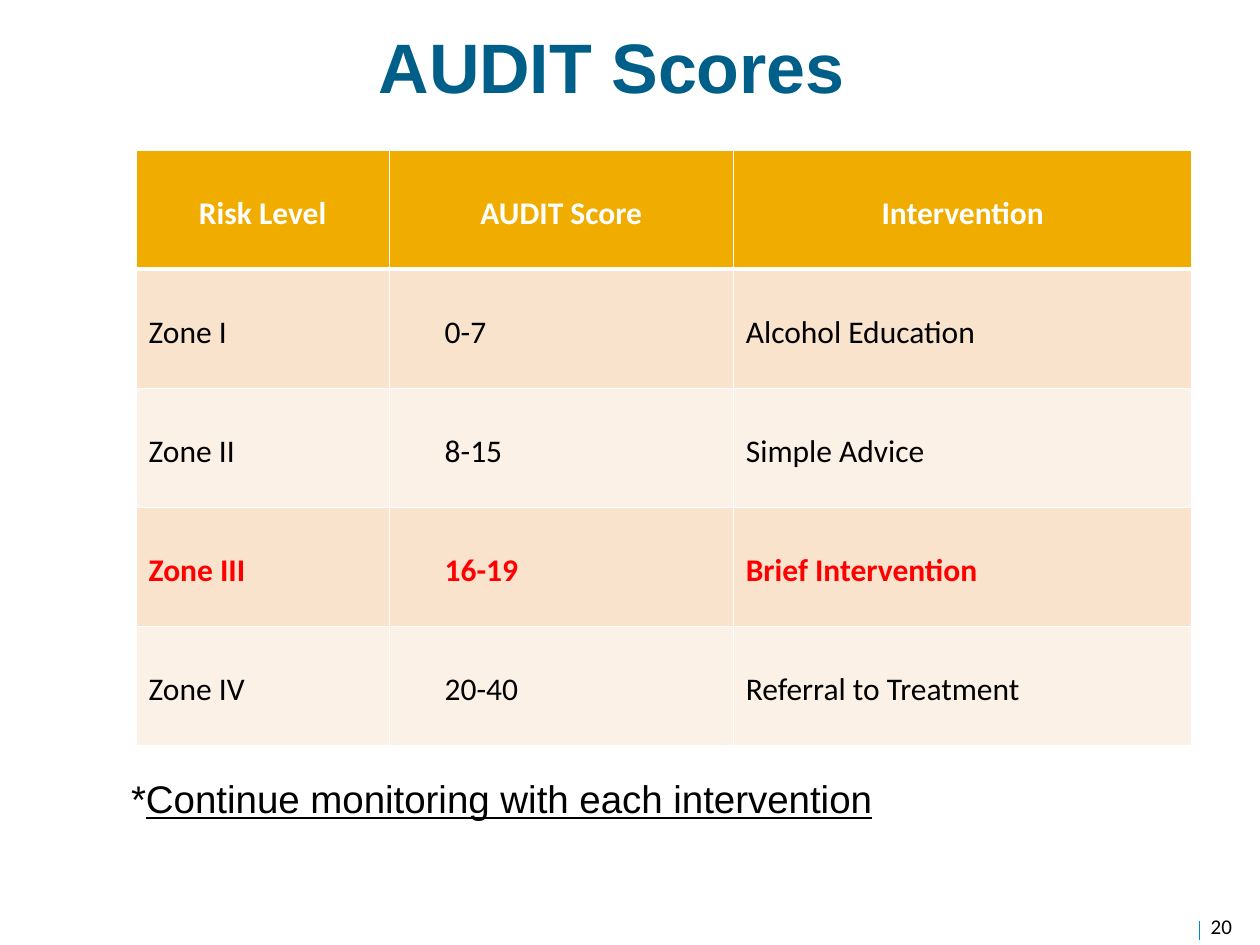
from dataclasses import dataclass

from lxml.etree import SubElement
from pptx import Presentation
from pptx.dml.color import RGBColor
from pptx.enum.shapes import MSO_CONNECTOR
from pptx.enum.text import MSO_ANCHOR, PP_ALIGN
from pptx.oxml import parse_xml
from pptx.oxml.ns import nsdecls, qn
from pptx.util import Emu, Inches, Pt

WIDTH, HEIGHT = Inches(10), Inches(7.5)
GRID_COLUMNS, GRID_ROWS = 100, 75

TEAL, BLUE, GOLD = "005F89", "0084CF", "F0AD00"
BLACK, WHITE, RED = "000000", "FFFFFF", "FF0000"
BANDS = ("F9E3CC", "FCF1E7")


@dataclass(frozen=True)
class Area:
    """A place on the slide, in grid columns and rows."""
    left: float
    top: float
    columns: float
    rows: float

    def lengths(self) -> tuple:
        return (across(self.left), down(self.top),
                across(self.columns), down(self.rows))


@dataclass(frozen=True)
class Zone:
    level: str
    score: str
    intervention: str
    stressed: bool = False


HEADINGS = ("Risk Level", "AUDIT Score", "Intervention")
ZONES = (
    Zone("Zone I", "0-7", "Alcohol Education"),
    Zone("Zone II", "8-15", "Simple Advice"),
    Zone("Zone III", "16-19", "Brief Intervention", stressed=True),
    Zone("Zone IV", "20-40", "Referral to Treatment"),
)
COLUMN_WIDTHS = (20.1, 27.3, 36.4)
CELL_INDENTS = (1, 4.4, 1)
TABLE_AREA = Area(10.8, 11.9, sum(COLUMN_WIDTHS), 47.3)


def across(columns: float) -> Emu:
    return Emu(round(WIDTH * columns / GRID_COLUMNS))


def down(rows: float) -> Emu:
    return Emu(round(HEIGHT * rows / GRID_ROWS))


def color(value: str) -> RGBColor:
    return RGBColor.from_string(value)


def write(para, text, *, size, font="Arial", fill=BLACK, bold=False,
          underline=False, align=None):
    span = para.add_run()
    span.text = text
    span.font.size, span.font.name = Pt(size), font
    span.font.bold, span.font.underline = bold, underline
    span.font.color.rgb = color(fill)
    if align is not None:
        para.alignment = align


def place(box, area: Area, anchor, inset: float = 0):
    """Move a text shape and set up its frame; return the first paragraph."""
    box.left, box.top, box.width, box.height = area.lengths()
    frame = box.text_frame
    frame.word_wrap = True
    frame.vertical_anchor = anchor
    frame.margin_left = frame.margin_right = across(inset)
    frame.margin_top = frame.margin_bottom = down(inset / 2)
    return frame.paragraphs[0]


def set_borders(cell, **widths: float):
    """Draw white cell borders; the sides come in schema order L, R, T, B."""
    properties = cell._tc.get_or_add_tcPr()
    for index, (side, width) in enumerate(widths.items()):
        properties.insert(index, parse_xml(
            f'<a:ln{side} {nsdecls("a")} w="{Pt(width)}"><a:solidFill>'
            f'<a:srgbClr val="{WHITE}"/></a:solidFill></a:ln{side}>'))


def fill_cell(cell, text: str, row: int, indent: float, stressed: bool):
    header = row == 0
    cell.fill.solid()
    cell.fill.fore_color.rgb = color(GOLD if header else BANDS[(row - 1) % 2])
    cell.vertical_anchor = MSO_ANCHOR.TOP
    cell.margin_top = down(3.5)
    cell.margin_left = across(1 if header else indent)
    write(cell.text_frame.paragraphs[0], text, size=18, font="Calibri",
          fill=WHITE if header else RED if stressed else BLACK,
          bold=header or stressed,
          align=PP_ALIGN.CENTER if header else PP_ALIGN.LEFT)
    set_borders(cell, L=1, R=1, T=3 if row == 1 else 1, B=3 if header else 1)


def add_score_table(slide):
    rows = [(HEADINGS, False)] + [
        ((zone.level, zone.score, zone.intervention), zone.stressed)
        for zone in ZONES]
    table = slide.shapes.add_table(
        len(rows), len(HEADINGS), *TABLE_AREA.lengths()).table
    for column, width in zip(table.columns, COLUMN_WIDTHS):
        column.width = across(width)
    for row, (texts, stressed) in enumerate(rows):
        table.rows[row].height = down(TABLE_AREA.rows / len(rows))
        for column, text in enumerate(texts):
            fill_cell(table.cell(row, column), text, row,
                      CELL_INDENTS[column], stressed)


def add_page_number(slide, number: str):
    rule = slide.shapes.add_connector(
        MSO_CONNECTOR.STRAIGHT, across(95.2), down(73.1),
        across(95.2), down(74.6))
    rule.line.color.rgb = color(BLUE)
    rule.line.width = Pt(0.5)
    SubElement(rule._element.spPr, qn("a:effectLst"))
    area = Area(95.1, 72, 4.8, 3)
    box = slide.shapes.add_textbox(*area.lengths())
    write(place(box, area, MSO_ANCHOR.BOTTOM, inset=1), number,
          size=12, font="Calibri")


def main():
    deck = Presentation()
    deck.slide_width, deck.slide_height = WIDTH, HEIGHT
    slide = deck.slides.add_slide(deck.slide_layouts[1])
    title, body = slide.placeholders

    # Title
    write(place(title, Area(10.8, 1.9, 75.5, 13), MSO_ANCHOR.TOP),
          "AUDIT Scores", size=40, fill=TEAL, bold=True,
          align=PP_ALIGN.CENTER)

    # Note at the foot of the body, below the table
    para = place(body, Area(10.4, 11.9, 84.2, 58.1), MSO_ANCHOR.BOTTOM)
    body.text_frame.margin_bottom = down(4.8)
    properties = para._p.get_or_add_pPr()
    properties.set("marL", "0")
    properties.set("indent", "0")
    SubElement(properties, qn("a:buNone"))
    para.space_before = Pt(0)
    write(para, "*", size=22)
    write(para, "Continue monitoring with each intervention", size=22,
          underline=True)

    # Page number and score table
    add_page_number(slide, "20")
    add_score_table(slide)
    deck.save("out.pptx")


if __name__ == "__main__":
    main()
